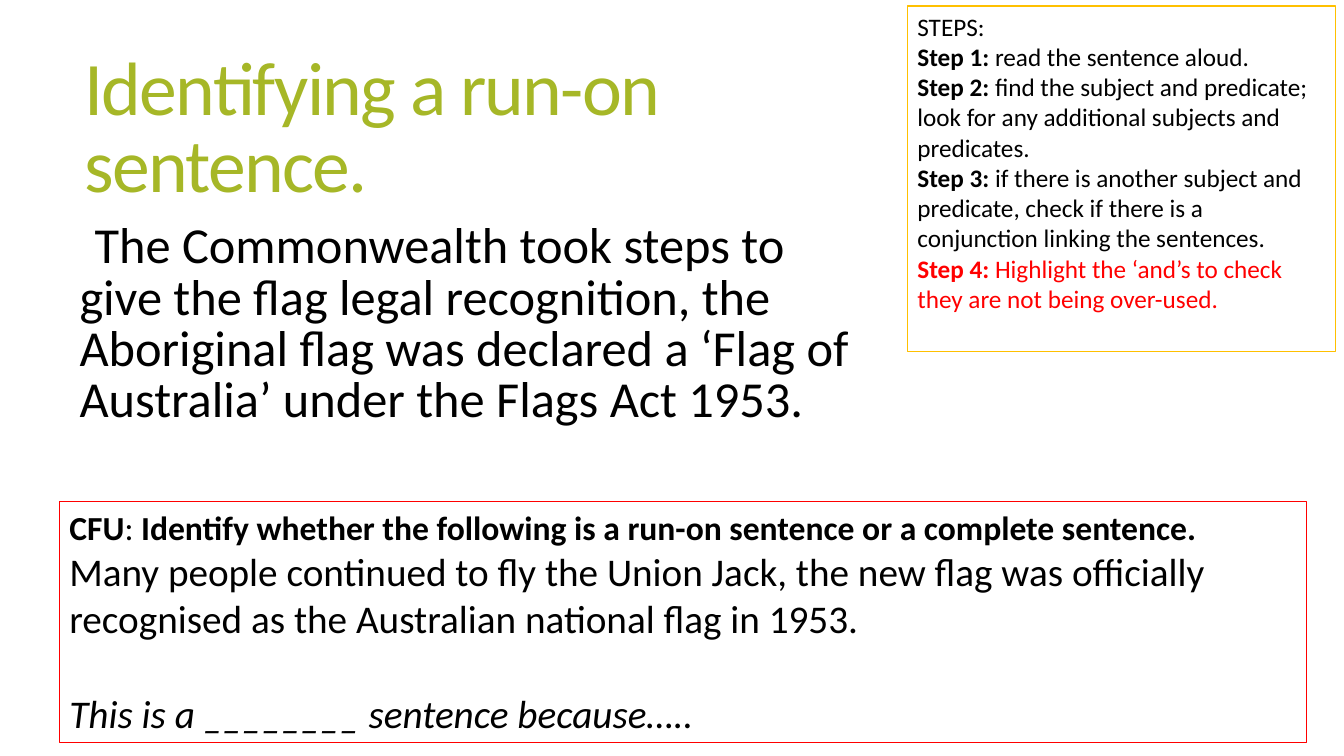
from dataclasses import dataclass
from typing import Optional

from lxml import etree
from pptx import Presentation
from pptx.dml.color import RGBColor
from pptx.enum.shapes import MSO_SHAPE
from pptx.enum.text import MSO_ANCHOR, PP_ALIGN
from pptx.oxml.ns import qn
from pptx.slide import Slide
from pptx.util import Inches, Pt

RECTANGLE = MSO_SHAPE.RECTANGLE
TOP, MIDDLE = MSO_ANCHOR.TOP, MSO_ANCHOR.MIDDLE
LEFT = PP_ALIGN.LEFT
FONT = "Calibri"
COLORS = {"text": "000000", "title": "A6B727", "red": "FF0000", "gold": "FFC000"}


@dataclass
class Words:
    text: str
    size: float
    bold: bool = False
    italic: bool = False
    color: str = "text"
    spacing: float = 0


@dataclass
class Para:
    runs: list[Words]
    line_spacing: float = 1.0
    space_before: float = 0
    bullet: str = ""
    indent: float = 0


@dataclass
class Block:
    left: float
    top: float
    width: float
    height: float
    paras: list[Para]
    border: Optional[str] = None
    anchor: MSO_ANCHOR = TOP


def step(label: str, instruction: str, color: str = "text") -> Para:
    return Para([Words(label, 18, bold=True, color=color),
                 Words(instruction, 18, color=color)])


BLOCKS = [
    Block(0.74, 0.39, 7.99, 1.81, [
        Para([Words("Identifying a run-on sentence.", 54, color="title", spacing=-1.2)],
             line_spacing=0.85),
    ], anchor=MIDDLE),
    Block(0.59, 2.16, 8.08, 4.12, [
        Para([Words("The Commonwealth took steps to give the flag legal recognition, "
                    "the Aboriginal flag was declared a ‘Flag of Australia’ under the "
                    "Flags Act 1953.", 36)],
             line_spacing=0.85, space_before=13, bullet=" ", indent=0.1),
    ]),
    Block(9, 0.06, 4.25, 3.43, [
        Para([Words("STEPS:", 18)]),
        step("Step 1: ", "read the sentence aloud."),
        step("Step 2: ", "find the subject and predicate; look for any additional "
                         "subjects and predicates."),
        step("Step 3: ", "if there is another subject and predicate, check if "
                         "there is a conjunction linking the sentences."),
        step("Step 4:", " Highlight the ‘and’s to check they are not being over-used.",
             "red"),
    ], border="gold"),
    Block(0.59, 4.98, 12.37, 2.39, [
        Para([Words("CFU", 24, bold=True), Words(": ", 24),
              Words("Identify whether the following is a run-on sentence or a "
                    "complete sentence.", 24, bold=True)]),
        Para([Words("Many people continued to fly the Union Jack, the new flag was "
                    "officially recognised as the Australian national flag in 1953.", 28)]),
        Para([Words("This is a ________ sentence because…..", 28, italic=True)],
             space_before=34),
    ], border="red"),
]


def rgb(name: str) -> RGBColor:
    return RGBColor.from_string(COLORS[name])


def add_words(paragraph, words: Words) -> None:
    run = paragraph.add_run()
    run.text = words.text
    font = run.font
    font.name, font.size = FONT, Pt(words.size)
    font.bold, font.italic = words.bold, words.italic
    font.color.rgb = rgb(words.color)
    if words.spacing:
        run._r.get_or_add_rPr().set("spc", str(round(words.spacing * 100)))


def fill_paragraph(paragraph, para: Para) -> None:
    paragraph.alignment = LEFT
    paragraph.line_spacing = para.line_spacing
    paragraph.space_before = Pt(para.space_before)
    if para.bullet:
        properties = paragraph._p.get_or_add_pPr()
        properties.set("marL", str(Inches(para.indent)))
        properties.set("indent", str(-Inches(para.indent)))
        etree.SubElement(properties, qn("a:buChar")).set("char", para.bullet)
    for words in para.runs:
        add_words(paragraph, words)


def add_block(slide: Slide, block: Block) -> None:
    bounds = [Inches(v) for v in (block.left, block.top, block.width, block.height)]
    if block.border:
        panel = slide.shapes.add_shape(RECTANGLE, *bounds)
        panel.shadow.inherit = False
        panel.fill.background()
        panel.line.color.rgb = rgb(block.border)
        panel.line.width = Pt(0.75)
    else:
        panel = slide.shapes.add_textbox(*bounds)
    frame = panel.text_frame
    frame.word_wrap = True
    frame.vertical_anchor = block.anchor
    for index, para in enumerate(block.paras):
        paragraph = frame.add_paragraph() if index else frame.paragraphs[0]
        fill_paragraph(paragraph, para)


def main() -> None:
    deck = Presentation()
    deck.slide_width, deck.slide_height = Inches(13.33), Inches(7.5)
    slide = deck.slides.add_slide(deck.slide_layouts[6])
    for block in BLOCKS:
        add_block(slide, block)
    deck.save("out.pptx")


if __name__ == "__main__":
    main()
